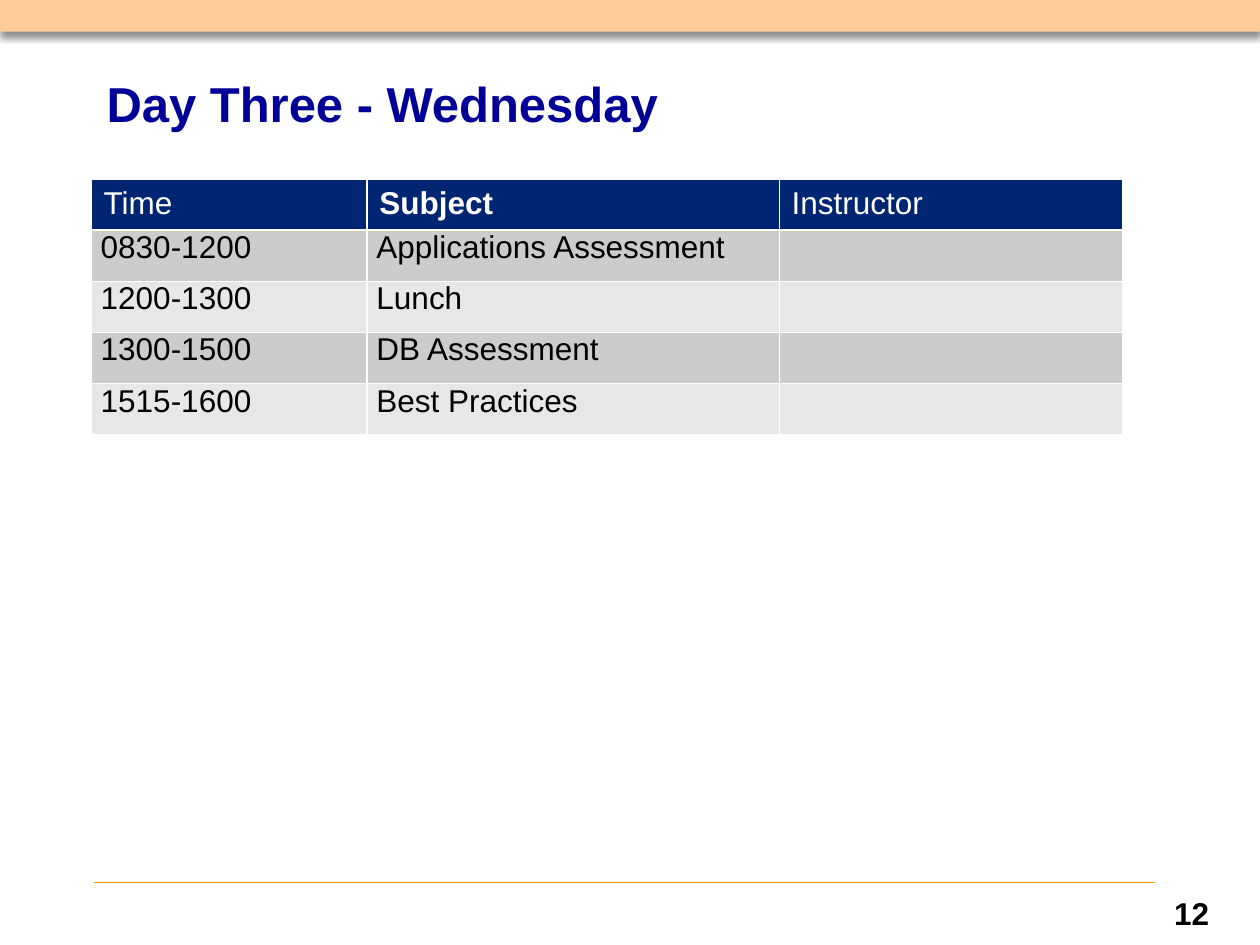
"""Draw the Wednesday timetable slide."""
from dataclasses import dataclass
from typing import Optional

from lxml import etree
from pptx import Presentation
from pptx.dml.color import RGBColor
from pptx.enum import shapes, text
from pptx.oxml import ns
from pptx.util import Cm, Pt


@dataclass(frozen=True)
class Theme:
    """Colours, font and type sizes."""
    face: str = "Arial"
    white: str = "FFFFFF"
    black: str = "000000"
    title: str = "000099"
    band: str = "FFCC99"
    rule: str = "FF9900"
    head: str = "002673"
    odd: str = "CCCCCC"
    even: str = "E7E7E7"
    big: int = 28
    base: int = 18


@dataclass(frozen=True)
class Label:
    """A line of text in a box given in centimetres."""
    words: str
    box: tuple[float, float, float, float]
    size: int
    tint: str
    align: text.PP_ALIGN
    anchor: text.MSO_ANCHOR
    lead: Optional[int] = None


@dataclass(frozen=True)
class Look:
    """The style of a table cell."""
    fill: str
    tint: str
    side: float
    top: float
    bold: bool = False


THEME = Theme()
HEAD = ("Time", "Subject", "Instructor")
ROWS = (
    ("0830-1200", "Applications Assessment", ""),
    ("1200-1300", "Lunch", ""),
    ("1300-1500", "DB Assessment", ""),
    ("1515-1600", "Best Practices", ""),
)
WIDTHS = (5.56, 8.31, 6.93)
HIGH = 1.03
LABELS = (
    Label("Day Three - Wednesday", (1.9, 0.76, 21.39, 2.62), THEME.big,
          THEME.title, text.PP_ALIGN.LEFT, text.MSO_ANCHOR.MIDDLE),
    Label("12", (23.29, 17.78, 1.47, 0.43), THEME.base,
          THEME.black, text.PP_ALIGN.CENTER, text.MSO_ANCHOR.TOP, 25),
)


def rgb(code: str) -> RGBColor:
    """Turn a hex code into a colour."""
    return RGBColor.from_string(code)


def add(root, tag: str, **attrs):
    """Append a child element."""
    return etree.SubElement(root, ns.qn(tag), attrs)


def style(para, size: int, tint: str, bold: bool) -> None:
    """Set the font of a paragraph."""
    font = para.font
    font.name, font.size, font.bold = THEME.face, Pt(size), bold
    font.color.rgb = rgb(tint)


def draw_rule(slide) -> None:
    """Draw the thin line above the page number."""
    line = slide.shapes.add_connector(
        shapes.MSO_CONNECTOR.STRAIGHT, Cm(1.9), Cm(17.78), Cm(23.29), Cm(17.78))
    line.line.color.rgb, line.line.width = rgb(THEME.rule), Pt(0.5)
    add(line._element.spPr, "a:effectLst")


def draw_band(slide) -> None:
    """Draw the top band with its soft shadow."""
    band = slide.shapes.add_shape(
        shapes.MSO_SHAPE.RECTANGLE, 0, 0, Cm(25.4), Cm(0.64))
    band.fill.solid()
    band.fill.fore_color.rgb = rgb(THEME.band)
    band.line.fill.background()
    band.shadow.inherit = False
    glow = add(band._element.spPr.find(ns.qn("a:effectLst")), "a:outerShdw",
               blurRad=str(Pt(4)), dist=str(Pt(3)), dir="5400000",
               algn="t", rotWithShape="0")
    add(add(glow, "a:srgbClr", val=THEME.black), "a:alpha", val="43000")


def draw_label(slide, label: Label) -> None:
    """Draw one bold line of text."""
    frame = slide.shapes.add_textbox(*map(Cm, label.box)).text_frame
    frame.word_wrap = True
    frame.vertical_anchor = label.anchor
    frame.text = label.words
    para = frame.paragraphs[0]
    para.alignment = label.align
    if label.lead:
        para.line_spacing = Pt(label.lead)
    style(para, label.size, label.tint, True)


def draw_cell(cell, words: str, look: Look) -> None:
    """Fill one cell and draw its borders."""
    cell.text = words
    style(cell.text_frame.paragraphs[0], THEME.base, look.tint, look.bold)
    cell.margin_left = cell.margin_right = Cm(look.side)
    cell.margin_top = cell.margin_bottom = Cm(look.top)
    props = cell._tc.get_or_add_tcPr()
    for side in "LRTB":
        edge = add(props, f"a:ln{side}", w=str(Pt(1)))
        add(add(edge, "a:solidFill"), "a:srgbClr", val=THEME.white)
    cell.fill.solid()
    cell.fill.fore_color.rgb = rgb(look.fill)


def draw_table(slide) -> None:
    """Draw the timetable."""
    lines = (HEAD, *ROWS)
    table = slide.shapes.add_table(
        len(lines), len(HEAD), Cm(1.84), Cm(3.61),
        Cm(sum(WIDTHS)), Cm(HIGH * len(lines))).table
    for col, wide in zip(table.columns, WIDTHS):
        col.width = Cm(wide)
    for i, line in enumerate(lines):
        table.rows[i].height = Cm(HIGH)
        for j, words in enumerate(line):
            if i == 0:
                look = Look(THEME.head, THEME.white, 0.25, 0.13,
                            words == "Subject")
            else:
                fill = THEME.odd if i % 2 else THEME.even
                look = Look(fill, THEME.black, 0.19, 0)
            draw_cell(table.cell(i, j), words, look)


def main() -> None:
    """Build and save the slide."""
    deck = Presentation()
    deck.slide_width, deck.slide_height = Cm(25.4), Cm(19.05)
    slide = deck.slides.add_slide(deck.slide_layouts[6])
    draw_rule(slide)
    draw_band(slide)
    draw_table(slide)
    for label in LABELS:
        draw_label(slide, label)
    deck.save("out.pptx")


if __name__ == "__main__":
    main()
